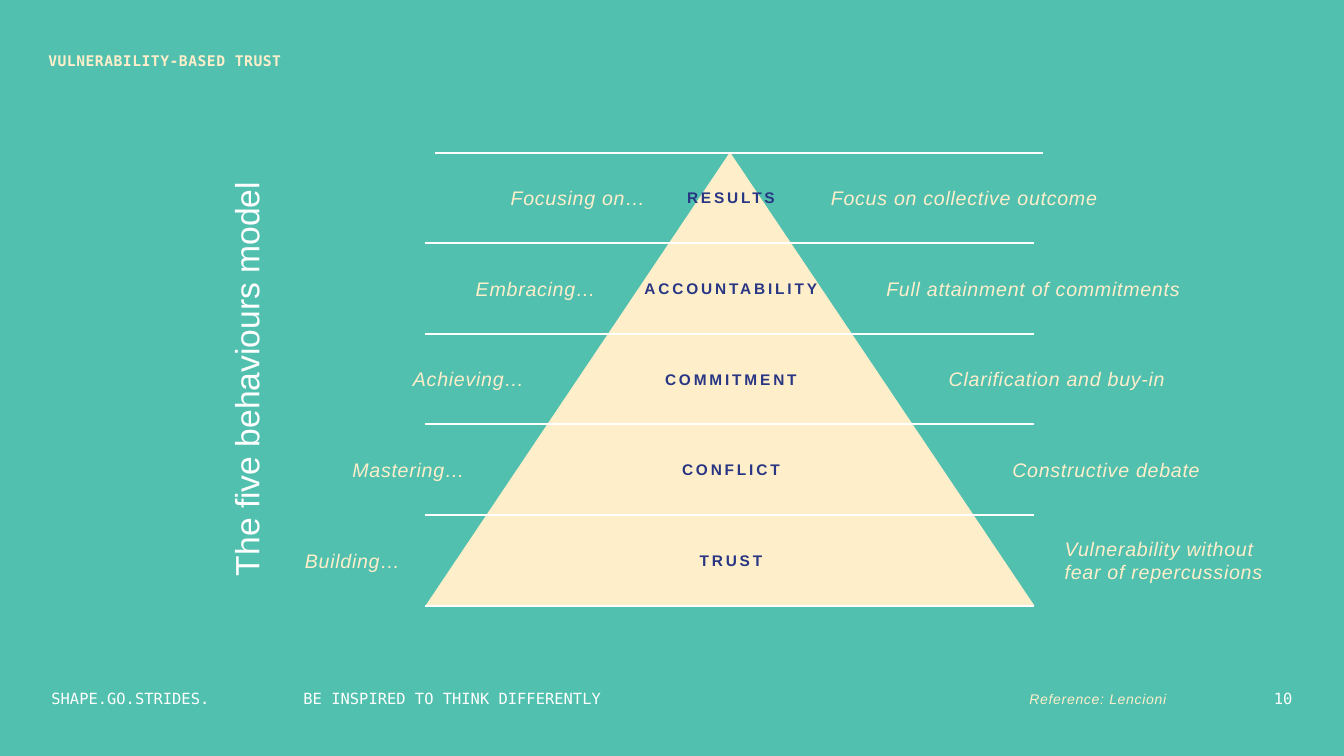
from lxml.etree import SubElement
from pptx import Presentation
from pptx.dml.color import RGBColor
from pptx.enum.shapes import MSO_CONNECTOR, MSO_SHAPE
from pptx.enum.text import MSO_ANCHOR, MSO_AUTO_SIZE, PP_ALIGN
from pptx.oxml.ns import qn
from pptx.util import Inches, Pt

TEAL = RGBColor(0x51, 0xC0, 0xAF)
CREAM = RGBColor(0xFE, 0xEE, 0xCA)
NAVY = RGBColor(0x28, 0x36, 0x83)
WHITE = RGBColor(0xFF, 0xFF, 0xFF)
SANS = "Arial"
MONO = "DejaVu Sans Mono"

STEP = 0.9  # height of one pyramid level
LEFT, RIGHT = 4.22, 10.26
TOP = 1.51

# level, prompt, right edge of prompt, outcome, left edge and width of outcome
LEVELS = [
    ("RESULTS", "Focusing on…", 6.4, "Focus on collective outcome", 8.24, 2.88),
    ("ACCOUNTABILITY", "Embracing…", 5.91, "Full attainment of commitments", 8.79, 3.48),
    ("COMMITMENT", "Achieving…", 5.2, "Clarification and buy-in", 9.41, 2.3),
    ("CONFLICT", "Mastering…", 4.61, "Constructive debate", 10.04, 2.1),
    ("TRUST", "Building…", 3.97, "Vulnerability without\nfear of repercussions", 10.56, 2.26),
]


def write(frame, text, size=11, font=SANS, color=WHITE, bold=False, italic=False,
          space=0, align=PP_ALIGN.LEFT, anchor=MSO_ANCHOR.TOP, inset=0):
    """Fill a text frame with one paragraph; space is letter spacing in points."""
    frame.word_wrap = True
    frame.auto_size = MSO_AUTO_SIZE.NONE
    frame.vertical_anchor = anchor
    frame.margin_left = frame.margin_right = Inches(2 * inset)
    frame.margin_top = frame.margin_bottom = Inches(inset)
    para = frame.paragraphs[0]
    para.alignment = align
    for i, line in enumerate(text.split("\n")):
        if i:
            para.add_line_break()
        run = para.add_run()
        run.text = line
        face = run.font
        face.size, face.name = Pt(size), font
        face.bold, face.italic = bold, italic
        face.color.rgb = color
        if space:
            run._r.get_or_add_rPr().set("spc", str(int(space * 100)))
    return para


class Board:
    """The slide in work and the style of its elements."""

    note = dict(size=14, color=CREAM, italic=True, space=0.5, anchor=MSO_ANCHOR.MIDDLE)
    label = dict(color=NAVY, bold=True, space=2, align=PP_ALIGN.CENTER,
                 anchor=MSO_ANCHOR.MIDDLE)

    def __init__(self, deck):
        self.slide = deck.slides.add_slide(deck.slide_layouts[5])
        self.shapes = self.slide.shapes
        fill = self.slide.background.fill
        fill.solid()
        fill.fore_color.rgb = TEAL

    def title(self, text, x, y, w, h):
        """Place the title so that it reads upwards."""
        box = self.shapes.title
        box.left, box.top, box.width, box.height = map(Inches, (x, y, w, h))
        box.rotation = 270
        para = write(box.text_frame, text, size=24, align=PP_ALIGN.CENTER, inset=0.05)
        para.line_spacing = 0.9

    def text(self, text, x, y, w, h=0.3, **style):
        box = self.shapes.add_textbox(*map(Inches, (x, y, w, h)))
        write(box.text_frame, text, **style)

    def peak(self, x, y, w, h):
        """Draw the pyramid."""
        shape = self.shapes.add_shape(MSO_SHAPE.ISOSCELES_TRIANGLE,
                                      *map(Inches, (x, y, w, h)))
        shape.shadow.inherit = False
        shape.fill.solid()
        shape.fill.fore_color.rgb = CREAM
        shape.line.fill.background()

    def rule(self, x, y, end):
        """Draw a level line from x to end."""
        line = self.shapes.add_connector(MSO_CONNECTOR.STRAIGHT,
                                         *map(Inches, (x, y, end, y)))
        line.line.color.rgb = WHITE
        line.line.width = Pt(1.5)
        SubElement(line._element.spPr, qn("a:effectLst"))


def main():
    deck = Presentation()
    deck.slide_width, deck.slide_height = Inches(13.33), Inches(7.5)
    board = Board(deck)

    board.title("The five behaviours model", 0.22, 3.53, 4.49, 0.46)
    board.text("VULNERABILITY-BASED TRUST", 0.48, 0.51, 2.5, 0.47, size=10.5,
               font=MONO, color=CREAM, bold=True, space=0.4)

    board.peak(LEFT, TOP, RIGHT - LEFT, 5 * STEP)
    board.rule(4.31, 1.52, 10.34)
    for i in range(1, 6):
        board.rule(LEFT, TOP + i * STEP, RIGHT)

    for i, (level, prompt, edge, outcome, start, width) in enumerate(LEVELS):
        y = TOP + 0.3 + i * STEP
        board.text(level, 5.8, y, 2.9, **board.label)
        board.text(prompt, edge - 1.8, y, 1.8, align=PP_ALIGN.RIGHT, **board.note)
        board.text(outcome, start, y, width, **board.note)

    board.text("Reference: Lencioni", 10.21, 6.78, 1.79, **{**board.note, "size": 10})
    board.text("SHAPE.GO.STRIDES.", 0.51, 6.84, 2.12, 0.19, font=MONO)
    board.text("BE INSPIRED TO THINK DIFFERENTLY", 3.01, 6.84, 3.35, 0.19, font=MONO)
    board.text("10", 10.7, 6.84, 2.12, 0.19, font=MONO, align=PP_ALIGN.RIGHT)

    deck.save("out.pptx")


if __name__ == "__main__":
    main()
